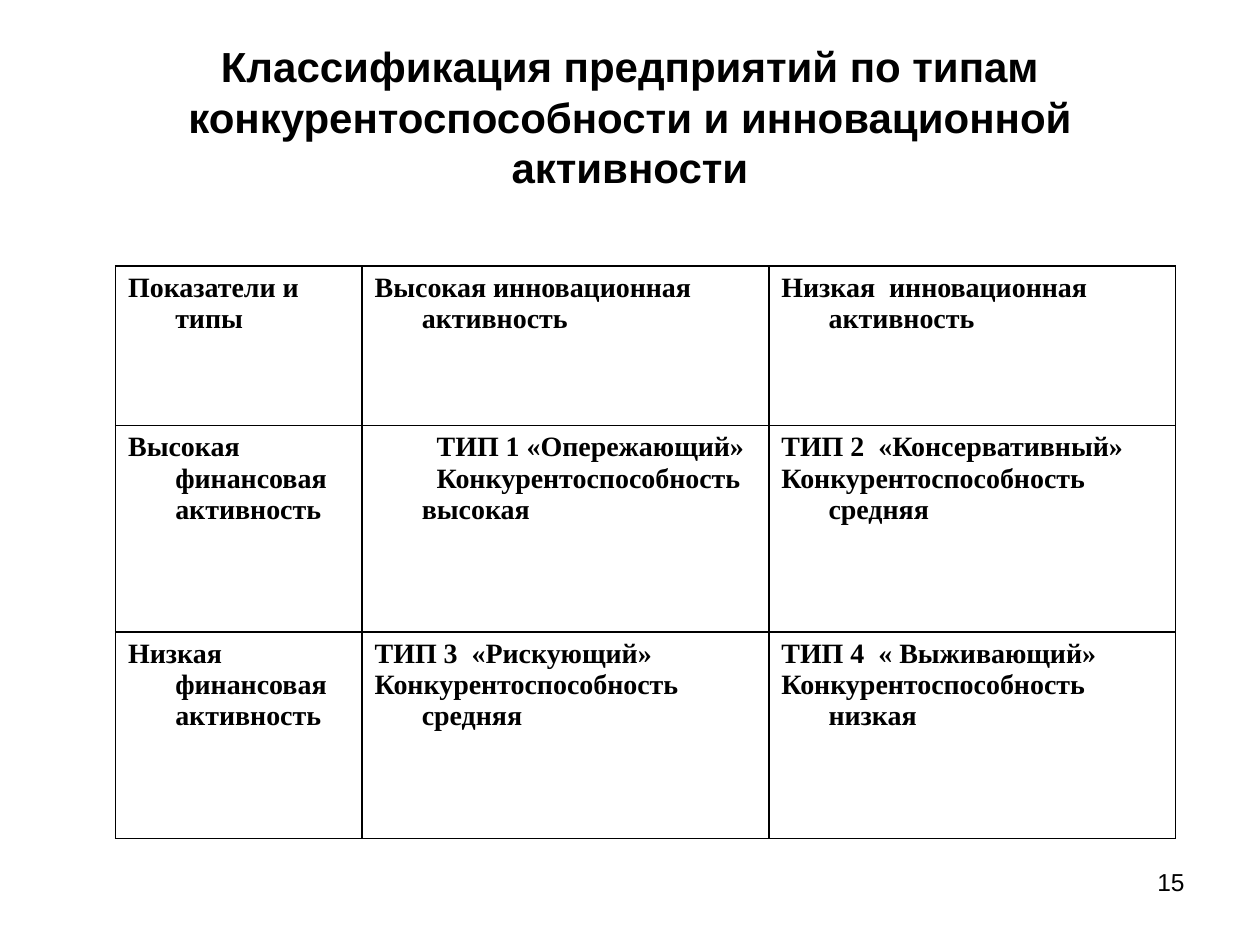
from dataclasses import dataclass

from lxml import etree
from pptx import Presentation
from pptx.dml.color import RGBColor
from pptx.enum.text import MSO_ANCHOR, PP_ALIGN
from pptx.oxml.ns import qn
from pptx.slide import Slide
from pptx.table import _Cell
from pptx.text.text import TextFrame
from pptx.util import Cm, Length, Pt

LEFT, CENTER, RIGHT = PP_ALIGN.LEFT, PP_ALIGN.CENTER, PP_ALIGN.RIGHT
TOP, MIDDLE = MSO_ANCHOR.TOP, MSO_ANCHOR.MIDDLE


@dataclass(frozen=True)
class Theme:
    ink: str = "000000"
    heading_font: str = "Arial"
    table_font: str = "Times New Roman"
    title_size: Length = Pt(24)
    table_size: Length = Pt(16)
    number_size: Length = Pt(14)
    border: Length = Pt(1)
    indent: Length = Cm(0.95)
    hanging: Length = Cm(-0.95)
    first_line: Length = Cm(0.3)


@dataclass(frozen=True)
class Entry:
    lines: tuple[str, ...]
    first_indent: Length


@dataclass(frozen=True)
class Label:
    text: str
    left: Length
    top: Length
    width: Length
    height: Length
    size: Length
    align: PP_ALIGN
    anchor: MSO_ANCHOR = TOP
    bold: bool = False


THEME = Theme()


def entry(*lines: str, first_indent: Length = THEME.hanging) -> Entry:
    return Entry(lines, first_indent)


LABELS = (
    Label("Классификация предприятий по типам конкурентоспособности и инновационной активности",
          Cm(1.27), Cm(0.76), Cm(22.86), Cm(3.18), THEME.title_size, CENTER, MIDDLE, True),
    Label("15", Cm(18.21), Cm(17.35), Cm(5.92), Cm(1.32), THEME.number_size, RIGHT),
)
COLUMN_WIDTHS = (Cm(4.97), Cm(8.2), Cm(8.2))
ROW_HEIGHTS = (Cm(3.22), Cm(4.16), Cm(4.16))
MATRIX = (
    (entry("Показатели и типы"),
     entry("Высокая инновационная активность"),
     entry("Низкая  инновационная активность")),
    (entry("Высокая финансовая активность"),
     entry("ТИП 1 «Опережающий»", "Конкурентоспособность высокая",
           first_indent=THEME.first_line),
     entry("ТИП 2  «Консервативный»", "Конкурентоспособность средняя")),
    (entry("Низкая финансовая активность"),
     entry("ТИП 3  «Рискующий»", "Конкурентоспособность средняя"),
     entry("ТИП 4  « Выживающий»", "Конкурентоспособность низкая")),
)


def write_text(frame: TextFrame, lines: tuple[str, ...], *, font: str, size: Length,
               bold: bool = False, align: PP_ALIGN = LEFT,
               indent: Length = Cm(0), first_indent: Length = Cm(0)) -> None:
    frame.word_wrap = True
    for index, line in enumerate(lines):
        para = frame.add_paragraph() if index else frame.paragraphs[0]
        para.alignment = align
        properties = para._p.get_or_add_pPr()
        properties.set("marL", str(int(indent)))
        properties.set("indent", str(int(first_indent)))
        span = para.add_run()
        span.text = line
        span.font.name = font
        span.font.size = size
        span.font.bold = bold
        span.font.color.rgb = RGBColor.from_string(THEME.ink)


def draw_label(page: Slide, label: Label) -> None:
    box = page.shapes.add_textbox(label.left, label.top, label.width, label.height)
    box.text_frame.vertical_anchor = label.anchor
    write_text(box.text_frame, (label.text,), font=THEME.heading_font, size=label.size,
               bold=label.bold, align=label.align)


def draw_borders(cell: _Cell) -> None:
    properties = cell._tc.get_or_add_tcPr()
    for position, side in enumerate(("lnL", "lnR", "lnT", "lnB")):
        line = etree.Element(qn(f"a:{side}"), w=str(int(THEME.border)))
        fill = etree.SubElement(line, qn("a:solidFill"))
        etree.SubElement(fill, qn("a:srgbClr"), val=THEME.ink)
        properties.insert(position, line)


def draw_matrix(page: Slide, left: Length, top: Length) -> None:
    table = page.shapes.add_table(len(ROW_HEIGHTS), len(COLUMN_WIDTHS), left, top,
                                  sum(COLUMN_WIDTHS), sum(ROW_HEIGHTS)).table
    table.first_row = False
    table.horz_banding = False
    for column, width in zip(table.columns, COLUMN_WIDTHS):
        column.width = width
    for row, height, entries in zip(table.rows, ROW_HEIGHTS, MATRIX):
        row.height = height
        for cell, content in zip(row.cells, entries):
            cell.fill.background()
            draw_borders(cell)
            write_text(cell.text_frame, content.lines, font=THEME.table_font,
                       size=THEME.table_size, bold=True, indent=THEME.indent,
                       first_indent=content.first_indent)


def main() -> None:
    deck = Presentation()
    deck.slide_width, deck.slide_height = Cm(25.4), Cm(19.05)
    page = deck.slides.add_slide(deck.slide_layouts[6])
    for label in LABELS:
        draw_label(page, label)
    draw_matrix(page, Cm(2.33), Cm(5.36))
    deck.save("out.pptx")


if __name__ == "__main__":
    main()
